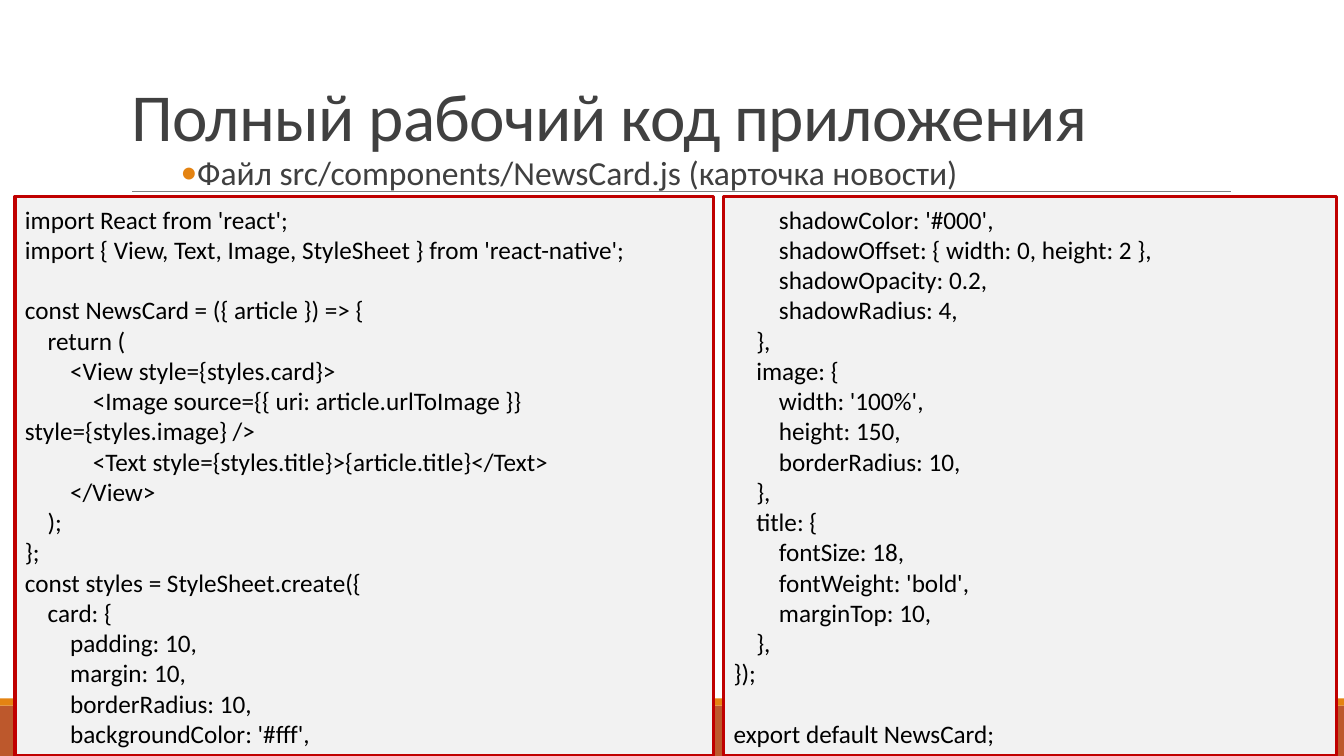
from lxml import etree
from pptx import Presentation
from pptx.dml.color import RGBColor
from pptx.enum.shapes import MSO_CONNECTOR, MSO_SHAPE
from pptx.enum.text import MSO_ANCHOR, PP_ALIGN
from pptx.oxml.ns import qn
from pptx.util import Cm, Pt

RECTANGLE = MSO_SHAPE.RECTANGLE
STRAIGHT = MSO_CONNECTOR.STRAIGHT
LEFT = PP_ALIGN.LEFT
TOP, MIDDLE, BOTTOM = MSO_ANCHOR.TOP, MSO_ANCHOR.MIDDLE, MSO_ANCHOR.BOTTOM

WIDTH, HEIGHT = 33.87, 19.05
PANEL_TOP = 4.95
INDENT_STEP = 0.57
CODE_LINE = 21.6

CARD_CODE = """\
import React from 'react';
import { View, Text, Image, StyleSheet } from 'react-native';

const NewsCard = ({ article }) => {
    return (
        <View style={styles.card}>
            <Image source={{ uri: article.urlToImage }} style={styles.image} />
            <Text style={styles.title}>{article.title}</Text>
        </View>
    );
};
const styles = StyleSheet.create({
    card: {
        padding: 10,
        margin: 10,
        borderRadius: 10,
        backgroundColor: '#fff',"""

STYLE_CODE = """\
        shadowColor: '#000',
        shadowOffset: { width: 0, height: 2 },
        shadowOpacity: 0.2,
        shadowRadius: 4,
    },
    image: {
        width: '100%',
        height: 150,
        borderRadius: 10,
    },
    title: {
        fontSize: 18,
        fontWeight: 'bold',
        marginTop: 10,
    },
});

export default NewsCard;"""


def color(value):
    return RGBColor.from_string(value)


def apply(target, values):
    for name, value in values.items():
        setattr(target, name, value)


class CodeSlide:
    font = "Calibri"
    text_color = "404040"
    accent = "E48312"

    def __init__(self, deck):
        self.slide = deck.slides.add_slide(deck.slide_layouts[5])
        self.shapes = self.slide.shapes

    def add_text(self, paragraph, text, size, ink, **layout):
        apply(paragraph, {"alignment": LEFT, **layout})
        run = paragraph.add_run()
        run.text = text
        apply(run.font, {"name": self.font, "size": Pt(size), "bold": False})
        run.font.color.rgb = color(ink)
        return run

    def title(self, text, left, top, width, height):
        title = self.shapes.title
        apply(title, {"left": Cm(left), "top": Cm(top),
                      "width": Cm(width), "height": Cm(height)})
        frame = title.text_frame
        apply(frame, {"vertical_anchor": BOTTOM, "word_wrap": True})
        run = self.add_text(frame.paragraphs[0], text, 48, self.text_color,
                            line_spacing=0.85)
        run.font._element.set("spc", "-50")

    def bar(self, left, top, width, height, fill, outline=None):
        bar = self.shapes.add_shape(RECTANGLE, Cm(left), Cm(top), Cm(width), Cm(height))
        bar.shadow.inherit = False
        bar.fill.solid()
        bar.fill.fore_color.rgb = color(fill)
        if outline:
            bar.line.color.rgb = color(outline)
            bar.line.width = Pt(2.25)
        else:
            bar.line.fill.background()
        return bar

    def rule(self, left, right, y):
        rule = self.shapes.add_connector(STRAIGHT, Cm(left), Cm(y), Cm(right), Cm(y))
        rule.line.color.rgb = color("808080")
        rule.line.width = Pt(0.5)
        etree.SubElement(rule._element.spPr, qn("a:effectLst"))

    def bullet(self, text, left, top, width, height):
        frame = self.shapes.add_textbox(Cm(left), Cm(top), Cm(width), Cm(height)).text_frame
        apply(frame, {"word_wrap": True, "vertical_anchor": TOP,
                      "margin_left": 0, "margin_right": 0})
        paragraph = frame.paragraphs[0]
        self.add_text(paragraph, text, 24, self.text_color,
                      line_spacing=0.9, space_after=Pt(2))
        properties = paragraph._p.get_or_add_pPr()
        properties.set("marL", str(Cm(0.51)))
        properties.set("indent", str(Cm(0.74)))
        bullet_color = etree.SubElement(properties, qn("a:buClr"))
        etree.SubElement(bullet_color, qn("a:srgbClr"), val=self.accent)
        etree.SubElement(properties, qn("a:buFont"), typeface=self.font)
        etree.SubElement(properties, qn("a:buChar"), char="•")

    def code_panel(self, code, left, width):
        panel = self.bar(left, PANEL_TOP, width, HEIGHT - PANEL_TOP, "F2F2F2", "C00000")
        frame = panel.text_frame
        apply(frame, {"word_wrap": True, "vertical_anchor": MIDDLE})
        paragraph, gap = frame.paragraphs[0], 0
        for number, line in enumerate(code.splitlines()):
            statement = line.lstrip()
            if not statement:
                gap = CODE_LINE
                continue
            if number:
                paragraph = frame.add_paragraph()
            self.add_text(paragraph, statement, 18, "000000", space_before=Pt(gap))
            level = (len(line) - len(statement)) // 4
            properties = paragraph._p.get_or_add_pPr()
            properties.set("marL", "0")
            properties.set("indent", str(Cm(level * INDENT_STEP)))
            gap = 0


def main():
    deck = Presentation()
    apply(deck, {"slide_width": Cm(WIDTH), "slide_height": Cm(HEIGHT)})
    page = CodeSlide(deck)
    page.bar(0, 17.78, WIDTH, 1.27, "BD582C")
    page.bar(0, 17.6, WIDTH, 0.18, page.accent)
    page.rule(3.33, 31.01, 4.83)
    page.title("Полный рабочий код приложения", 3.05, 0, 27.94, 4.04)
    page.bullet("Файл src/components/NewsCard.js (карточка новости)", 3.3, 3.81, 27.94, 11.18)
    page.code_panel(CARD_CODE, 0.38, 17.6)
    page.code_panel(STYLE_CODE, 18.24, 15.44)
    deck.save("out.pptx")


if __name__ == "__main__":
    main()
